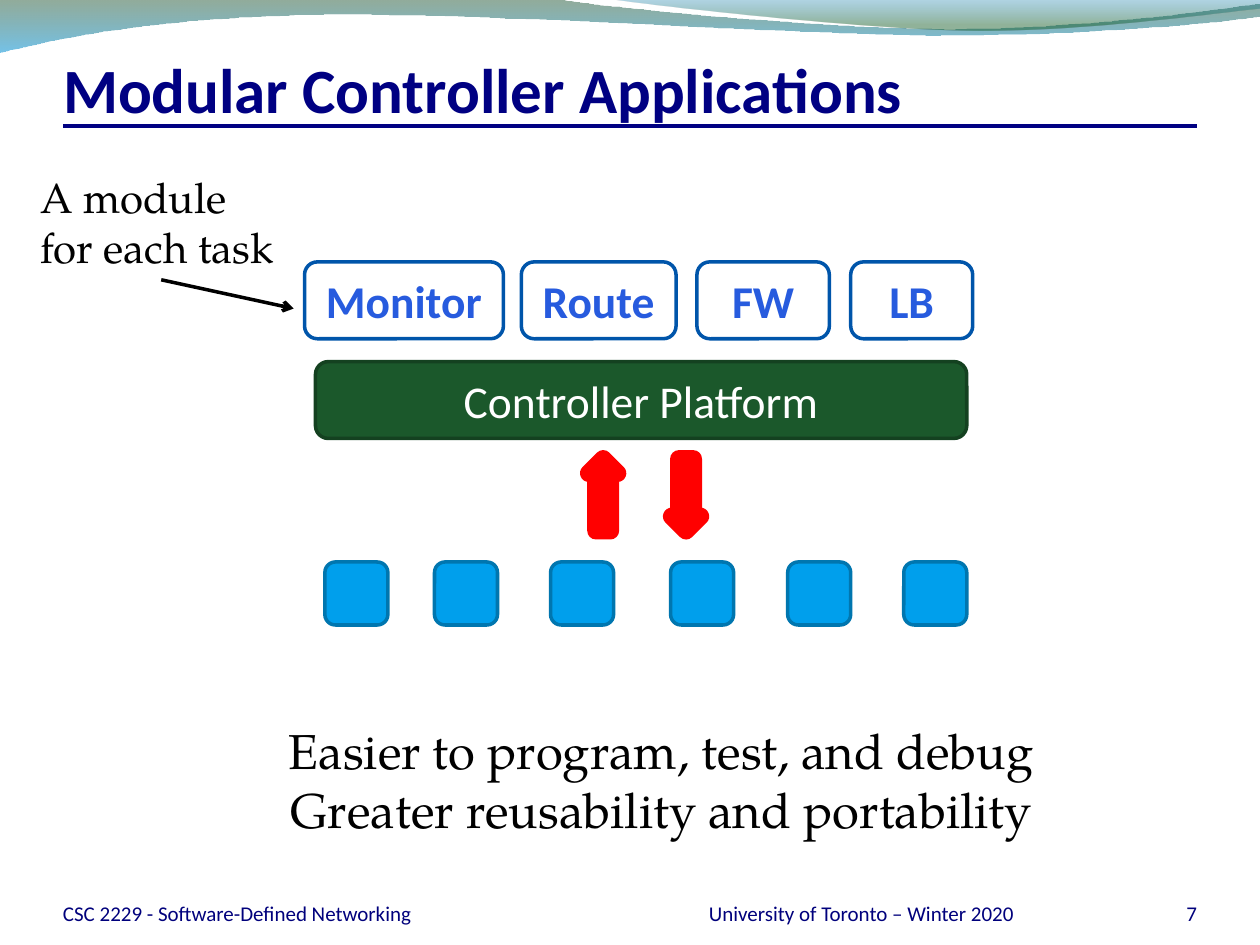
from lxml import etree
from pptx import Presentation
from pptx.dml.color import RGBColor
from pptx.enum import shapes, text
from pptx.oxml import ns
from pptx.util import Cm, Pt

COLORS = {
    "navy": "000082", "footer": "00007C", "black": "000000", "white": "FFFFFF",
    "module_line": "0055AA", "module_text": "275BDE",
    "platform": "1B582B", "platform_line": "144120",
    "switch": "009FEC", "switch_line": "0076AF", "message": "FF0000",
    "wave_green": "0F461E", "wave_sky": "0090D6",
    "wave_blue": "0076AF", "wave_leaf": "0D5821",
}
SANS, SERIF = "Calibri", "TeX Gyre Pagella"
LEFT, CENTER, RIGHT = text.PP_ALIGN.LEFT, text.PP_ALIGN.CENTER, text.PP_ALIGN.RIGHT
TOP, MIDDLE, BOTTOM = text.MSO_ANCHOR.TOP, text.MSO_ANCHOR.MIDDLE, text.MSO_ANCHOR.BOTTOM

LONG_WAVE = [
    [(0, -0.02)], [(11.18, -0.02)],
    [(12.09, 0.15), (16.87, 0.58), (19.25, 0.58)],
    [(21.67, 0.58), (24.33, 0.23), (25.4, 0.08)],
    [(25.43, 0.33)],
    [(24.97, 0.41), (22.1, 0.71), (18.95, 0.71)],
    [(15.8, 0.69), (9.7, 0.25), (6.53, 0.3)],
    [(3.28, 0.33), (1.17, 0.76), (-0.02, 1.05)],
]
SHORT_WAVE = [
    [(12.17, -0.02)],
    [(12.93, 0.1), (17.32, 0.58), (19.53, 0.61)],
    [(21.74, 0.64), (24.41, 0.28), (25.4, 0.18)],
    [(25.4, -0.02)],
]


def rgb(name):
    return RGBColor.from_string(COLORS[name])


def write(frame, lines, size, color, font=SANS, bold=False, align=LEFT, anchor=TOP, insets=None):
    frame.text = lines
    frame.vertical_anchor = anchor
    if insets is not None:
        frame.margin_left, frame.margin_top, frame.margin_right, frame.margin_bottom = map(Cm, insets)
    for paragraph in frame.paragraphs:
        paragraph.alignment = align
        for run in paragraph.runs:
            run.font.name, run.font.size, run.font.bold = font, Pt(size), bold
            run.font.color.rgb = rgb(color)


def add_title(slide, words):
    title = slide.shapes.title
    title.left, title.top, title.width, title.height = Cm(1.27), Cm(0.84), Cm(22.86), Cm(1.7)
    write(title.text_frame, words, 36, "navy", bold=True, anchor=BOTTOM, insets=(0, 0.13, 0, 0))
    title.text_frame.auto_size = text.MSO_AUTO_SIZE.NONE


def add_label(slide, box, words, size, color, wrap=True, **style):
    label = slide.shapes.add_textbox(*map(Cm, box))
    label.text_frame.word_wrap = wrap
    write(label.text_frame, words, size, color, **style)


def add_block(slide, kind, box, fill, line, width=2):
    block = slide.shapes.add_shape(kind, *map(Cm, box))
    block.shadow.inherit = False
    block.fill.solid()
    block.fill.fore_color.rgb = rgb(fill)
    block.line.color.rgb = rgb(line)
    block.line.width = Pt(width)
    return block


def add_line(slide, start, end, color, width, arrow=False):
    line = slide.shapes.add_connector(shapes.MSO_CONNECTOR.STRAIGHT, *map(Cm, start + end))
    line.line.color.rgb = rgb(color)
    line.line.width = Pt(width)
    if arrow:
        etree.SubElement(line.line._get_or_add_ln(), ns.qn("a:tailEnd"), type="arrow")
    etree.SubElement(line._element.spPr, ns.qn("a:effectLst"))


def bend_edges(wave, segments):
    edges = list(wave._element.iter(ns.qn("a:lnTo")))
    for edge, segment in zip(edges, segments[1:]):
        if len(segment) == 3:
            curve = etree.Element(ns.qn("a:cubicBezTo"))
            for x, y in segment:
                etree.SubElement(curve, ns.qn("a:pt"),
                                 x=str(Cm(x) - wave.left), y=str(Cm(y) - wave.top))
            edge.getparent().replace(edge, curve)


def add_wave(slide, segments, stops):
    corners = [tuple(map(Cm, segment[-1])) for segment in segments]
    builder = slide.shapes.build_freeform(*corners[0])
    builder.add_line_segments(corners[1:])
    wave = builder.convert_to_shape()
    bend_edges(wave, segments)
    wave.shadow.inherit = False
    wave.line.fill.background()
    wave.fill.gradient()
    wave.fill.gradient_angle = 270
    for stop, (position, color, opacity) in zip(wave.fill.gradient_stops, stops):
        stop.position = position
        stop.color.rgb = rgb(color)
        tint = stop._gs.find(ns.qn("a:srgbClr"))
        etree.SubElement(tint, ns.qn("a:alpha"), val=str(opacity * 1000))


def add_footer(slide):
    for left, width, words, align in [
        (1.27, 11.63, "CSC 2229 - Software-Defined Networking", LEFT),
        (22.02, 2.11, "7", RIGHT),
        (13.34, 8.05, "University of Toronto – Winter 2020", CENTER),
    ]:
        add_label(slide, (left, 17.65, width, 1.02), words, 12, "footer",
                  align=align, anchor=BOTTOM, insets=(0, 0, 0, 0))


def add_controller(slide):
    rounded = shapes.MSO_SHAPE.ROUNDED_RECTANGLE
    for left, width, name in [(6.14, 4.01, "Monitor"), (10.51, 3.12, "Route"),
                              (14.05, 2.67, "FW"), (17.15, 2.46, "LB")]:
        module = add_block(slide, rounded, (left, 5.28, width, 1.55), "white", "module_line")
        write(module.text_frame, name, 26, "module_text", bold=True, align=CENTER, anchor=MIDDLE)

    platform = add_block(slide, rounded, (6.36, 7.29, 13.13, 1.55), "platform", "platform_line")
    write(platform.text_frame, "Controller Platform", 26, "white", align=CENTER, anchor=MIDDLE)

    for left, rotation in [(11.87, 0), (13.54, 180)]:
        message = add_block(slide, shapes.MSO_SHAPE.UP_ARROW, (left, 9.25, 0.58, 1.45),
                            "platform", "message", 10)
        message.rotation = rotation

    for left in (6.55, 8.76, 11.1, 13.52, 15.88, 18.22):
        add_block(slide, rounded, (left, 11.33, 1.27, 1.27), "switch", "switch_line")


def main():
    deck = Presentation()
    deck.slide_width, deck.slide_height = Cm(25.4), Cm(19.05)
    slide = deck.slides.add_slide(deck.slide_layouts[5])

    add_wave(slide, LONG_WAVE, [(0, "wave_green", 45), (1, "wave_sky", 55)])
    add_wave(slide, SHORT_WAVE, [(0, "wave_blue", 30), (0.8, "wave_leaf", 45)])
    add_line(slide, (1.27, 2.54), (24.13, 2.54), "navy", 2.25)
    add_title(slide, "Modular Controller Applications")
    add_footer(slide)
    add_label(slide, (5.39, 14.4, 15.88, 2.64),
              "Easier to program, test, and debug\nGreater reusability and portability",
              28, "black", wrap=False, font=SERIF, align=CENTER)
    add_line(slide, (3.25, 5.64), (5.92, 6.22), "black", 2, arrow=True)
    add_label(slide, (0.56, 3.33, 5.36, 2.31), "A module for each task", 24, "black", font=SERIF)
    add_controller(slide)
    deck.save("out.pptx")


if __name__ == "__main__":
    main()
